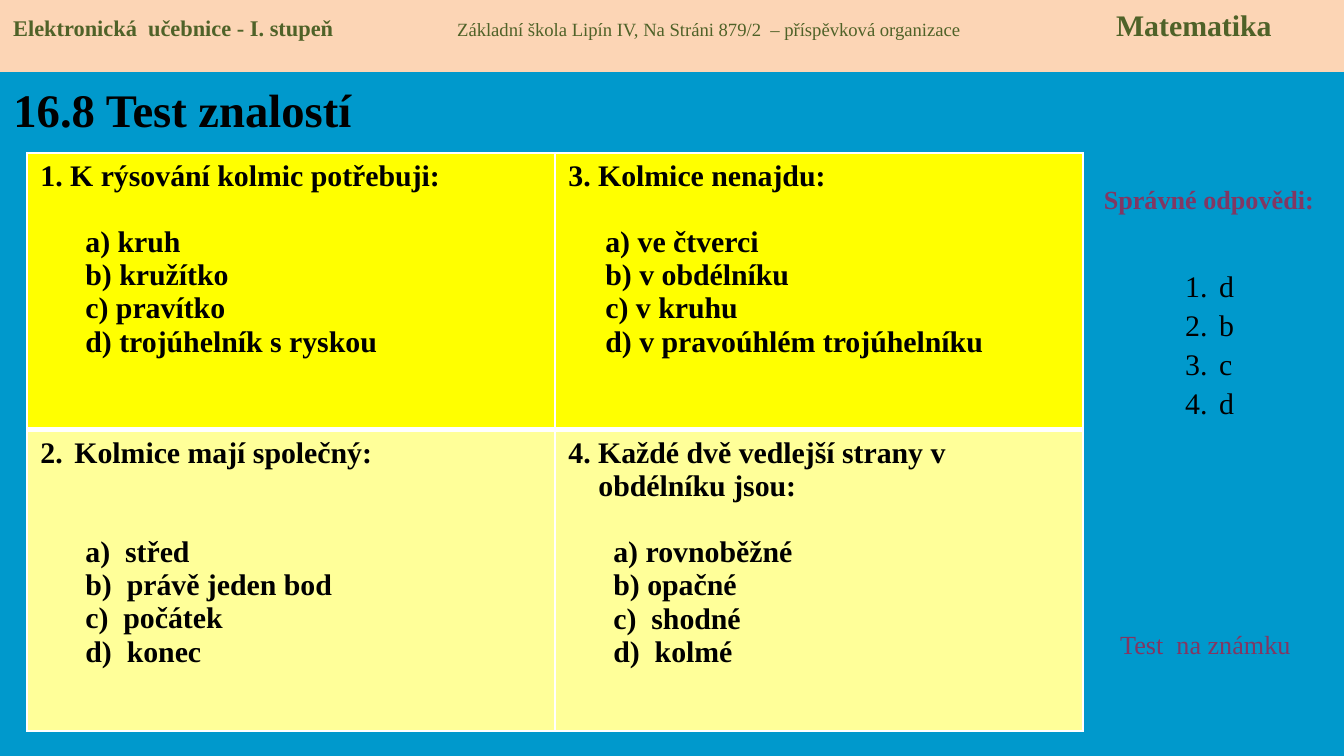
from lxml.etree import SubElement
from pptx import Presentation
from pptx.dml.color import RGBColor
from pptx.enum.shapes import MSO_SHAPE
from pptx.enum.text import MSO_ANCHOR, PP_ALIGN
from pptx.oxml.ns import qn
from pptx.util import Emu, Pt

EMU_PER_PX = 9144000 / 1344
FONT = "Times New Roman"
BLACK = RGBColor(0x00, 0x00, 0x00)
BLUE = RGBColor(0x00, 0x99, 0xCC)
PEACH = RGBColor(0xFC, 0xD5, 0xB5)
OLIVE = RGBColor(0x4F, 0x62, 0x28)
PLUM = RGBColor(0x81, 0x37, 0x63)
YELLOW = RGBColor(0xFF, 0xFF, 0x00)
PALE_YELLOW = RGBColor(0xFF, 0xFF, 0x99)

QUESTIONS = [
    [
        {"question": "1. K rýsování kolmic potřebuji:", "gap": 33, "indent": 45,
         "options": ["a) kruh", "b) kružítko", "c) pravítko", "d) trojúhelník s ryskou"]},
        {"question": "3. Kolmice nenajdu:", "gap": 33, "indent": 37,
         "options": ["a) ve čtverci", "b) v obdélníku", "c) v kruhu",
                     "d) v pravoúhlém trojúhelníku"]},
    ],
    [
        {"question": "Kolmice mají společný:", "gap": 66, "indent": 45,
         "hanging": 34, "number": 2,
         "options": ["a)  střed", "b)  právě jeden bod", "c)  počátek", "d)  konec"]},
        {"question": "4. Každé dvě vedlejší strany v\vobdélníku jsou:", "gap": 33,
         "indent": 45, "hanging": 30,
         "options": ["a) rovnoběžné", "b) opačné", "c)  shodné", "d)  kolmé"]},
    ],
]


def px(value):
    return Emu(round(value * EMU_PER_PX))


def apply_format(target, values):
    for name, value in values.items():
        setattr(target, name, value)


def format_font(font, size, color, bold=False):
    apply_format(font, {"name": FONT, "size": Pt(size), "bold": bold})
    font.color.rgb = color


def write(para, text, size, color, bold=False, **layout):
    para.text = text
    for span in para.runs:
        format_font(span.font, size, color, bold)
    apply_format(para, layout)


def set_indent(para, left, hanging=0):
    properties = para._p.get_or_add_pPr()
    properties.set("marL", str(px(left)))
    properties.set("indent", str(-px(hanging)))


def number_paragraph(para, start=1):
    bullet = SubElement(para._p.get_or_add_pPr(), qn("a:buAutoNum"))
    bullet.set("type", "arabicPeriod")
    bullet.set("startAt", str(start))


def add_text_box(page, left, top, width, height):
    box = page.shapes.add_textbox(px(left), px(top), px(width), px(height))
    box.text_frame.word_wrap = True
    return box.text_frame


def add_title(page, left, top, width, height):
    title = page.shapes.title
    apply_format(title, {"left": px(left), "top": px(top),
                         "width": px(width), "height": px(height)})
    apply_format(title.text_frame, {"word_wrap": False,
                                    "vertical_anchor": MSO_ANCHOR.MIDDLE})
    write(title.text_frame.paragraphs[0], "16.8 Test znalostí", 25, BLACK, True,
          alignment=PP_ALIGN.LEFT)


def add_banner(page, left, top, width, height):
    banner = page.shapes.add_shape(MSO_SHAPE.RECTANGLE, px(left), px(top),
                                   px(width), px(height))
    banner.shadow.inherit = False
    banner.fill.solid()
    banner.fill.fore_color.rgb = PEACH
    banner.line.fill.background()
    banner.text_frame.vertical_anchor = MSO_ANCHOR.TOP
    para = banner.text_frame.paragraphs[0]
    para.alignment = PP_ALIGN.LEFT
    tabs = SubElement(para._p.get_or_add_pPr(), qn("a:tabLst"))
    for position in (444, 1103):
        SubElement(tabs, qn("a:tab"), pos=str(px(position)), algn="l")
    for text, size, bold in (
        ("Elektronická  učebnice - I. stupeň\t", 12, True),
        ("Základní škola Lipín IV, Na Stráni 879/2  – příspěvková organizace\t", 10, False),
        ("Matematika", 16, True),
    ):
        span = para.add_run()
        span.text = text
        format_font(span.font, size, OLIVE, bold)


def add_borders(cell, widths):
    properties = cell._tc.get_or_add_tcPr()
    for side, width in widths.items():
        line = SubElement(properties, qn(f"a:ln{side}"), w=str(Pt(width)))
        fill = SubElement(line, qn("a:solidFill"))
        SubElement(fill, qn("a:srgbClr"), val="FFFFFF")


def fill_question(cell, entry):
    frame = cell.text_frame
    para = frame.paragraphs[0]
    write(para, entry["question"], 16, BLACK, True)
    hanging = entry.get("hanging", 0)
    set_indent(para, hanging, hanging)
    if "number" in entry:
        number_paragraph(para, entry["number"])
    for index, option in enumerate(entry["options"]):
        para = frame.add_paragraph()
        write(para, option, 16, BLACK, True,
              space_before=px(0 if index else entry["gap"]))
        set_indent(para, entry["indent"])


def add_questions(page, left, top, width, row_heights):
    table = page.shapes.add_table(2, 2, px(left), px(top), px(width),
                                  px(sum(row_heights))).table
    apply_format(table, {"first_row": False, "horz_banding": False})
    for column in table.columns:
        column.width = px(width // 2)
    for row_index, entries in enumerate(QUESTIONS):
        table.rows[row_index].height = px(row_heights[row_index])
        borders = {"L": 1, "R": 1, "T": (1, 3)[row_index], "B": (3, 1)[row_index]}
        for column_index, entry in enumerate(entries):
            cell = table.cell(row_index, column_index)
            add_borders(cell, borders)
            cell.fill.solid()
            cell.fill.fore_color.rgb = (YELLOW, PALE_YELLOW)[row_index]
            fill_question(cell, entry)


def add_answers(page, left, top, width, height):
    heading = add_text_box(page, left, top, width, 46)
    write(heading.paragraphs[0], "Správné odpovědi:", 14, PLUM, True,
          alignment=PP_ALIGN.CENTER)
    answers = add_text_box(page, left + 90, top + 45, 74, 267)
    answers.margin_top = px(46)
    for index, letter in enumerate("dbcd"):
        para = answers.add_paragraph() if index else answers.paragraphs[0]
        write(para, letter, 16, BLACK, space_after=px(3))
        set_indent(para, 34, 34)
        number_paragraph(para)
    footer = add_text_box(page, left + 25, top + height - 46, 211, 46)
    write(footer.paragraphs[0], "Test  na známku", 14, PLUM)


def main():
    deck = Presentation()
    apply_format(deck, {"slide_width": px(1344), "slide_height": px(756)})
    page = deck.slides.add_slide(deck.slide_layouts[5])
    page.background.fill.solid()
    page.background.fill.fore_color.rgb = BLUE
    add_title(page, 0, 74, 370, 70)
    add_questions(page, 27, 153, 1056, (277, 301))
    add_answers(page, 1082, 177, 254, 491)
    add_banner(page, 0, 0, 1344, 72)
    deck.save("out.pptx")


if __name__ == "__main__":
    main()
